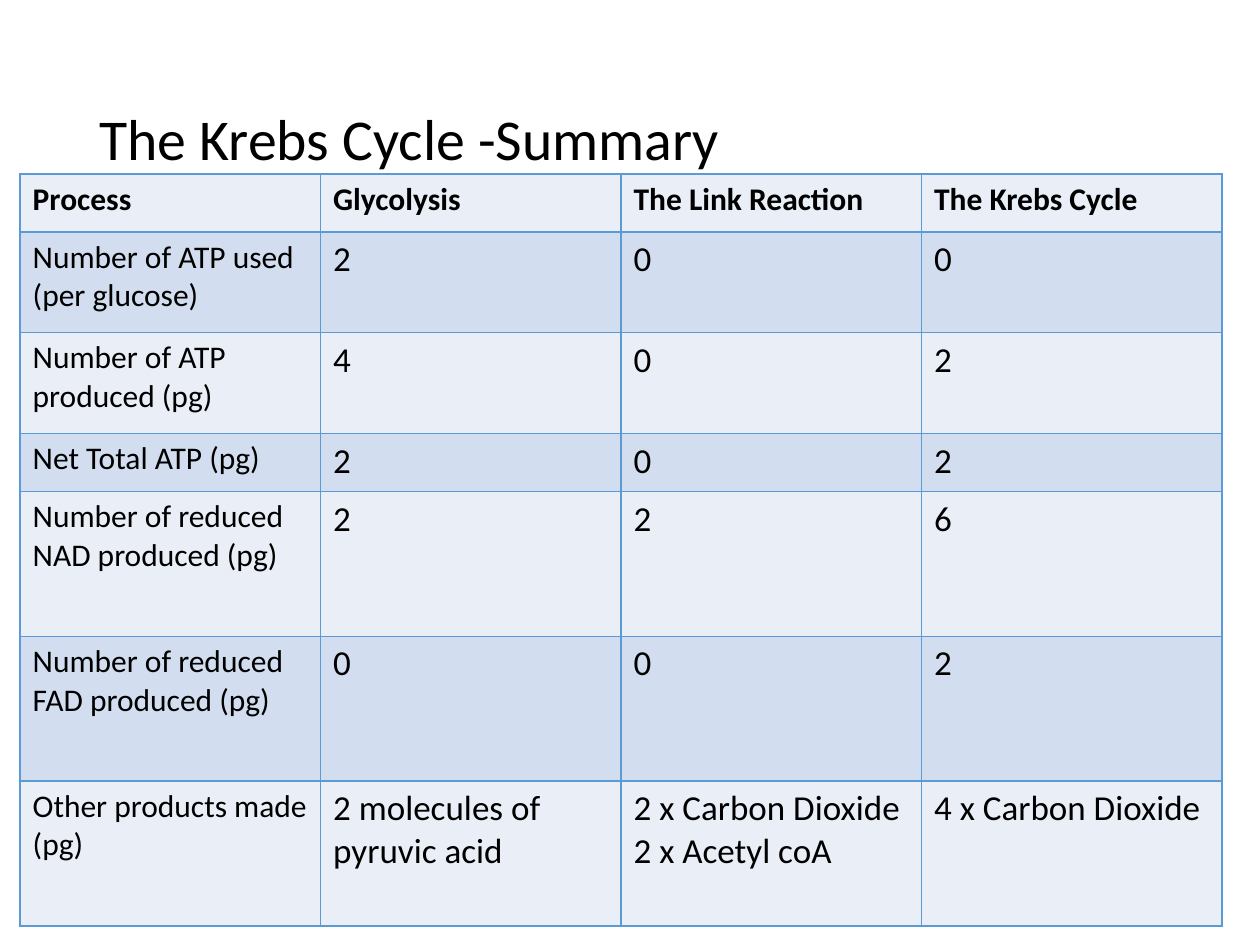
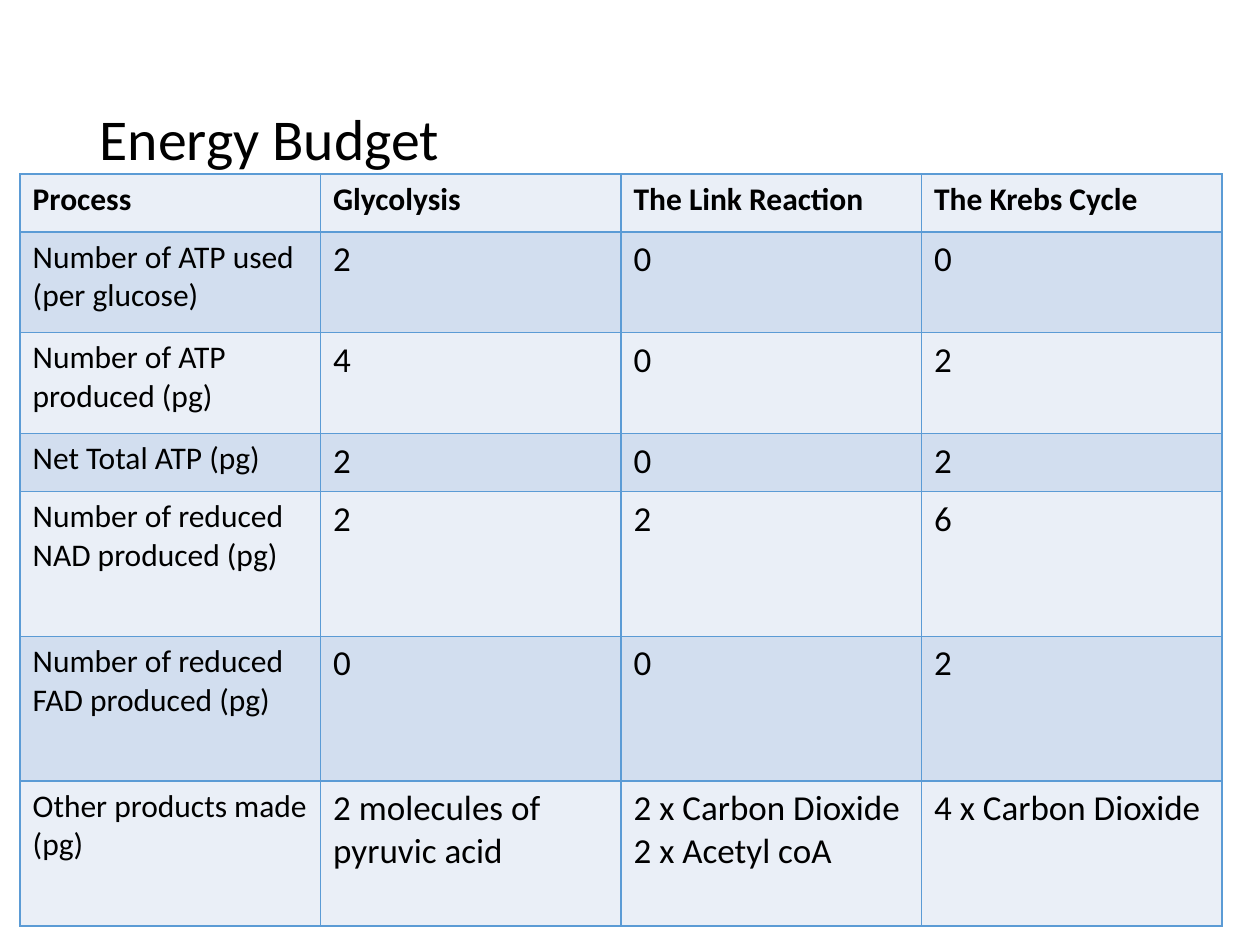
from lxml.etree import SubElement
from pptx import Presentation
from pptx.dml.color import RGBColor
from pptx.enum.text import MSO_ANCHOR, PP_ALIGN
from pptx.oxml.ns import qn
from pptx.util import Inches, Pt

COLORS = {"text": "000000", "border": "5B9BD5", "light": "EAEFF7", "dark": "D2DEEF"}
FONT = "Calibri"
TITLE_BOX = (0.69, 0.4, 8.62, 1.45)
BUDGET_BOX = (0.16, 1.38, 9.54, 5.97)
TITLES = ["The Krebs Cycle -Summary", "Energy Budget"]
ROW_HEIGHTS = [0.46, 0.8, 0.8, 0.46, 1.15, 1.15, 1.15]
BUDGET = [
    ("Process", "Glycolysis", "The Link Reaction", "The Krebs Cycle"),
    ("Number of ATP used\n(per glucose)", "2", "0", "0"),
    ("Number of ATP produced (pg)", "4", "0", "2"),
    ("Net Total ATP (pg)", "2", "0", "2"),
    ("Number of reduced NAD produced (pg)", "2", "2", "6"),
    ("Number of reduced FAD produced (pg)", "0", "0", "2"),
    ("Other products made (pg)", "2 molecules of pyruvic acid",
     "2 x Carbon Dioxide\n2 x Acetyl coA", "4 x Carbon Dioxide"),
]


def style_text(frame, size, bold=False):
    """Give every paragraph of a text frame the shared font."""
    for paragraph in frame.paragraphs:
        paragraph.alignment = PP_ALIGN.LEFT
        font = paragraph.font
        font.name, font.size, font.bold = FONT, Pt(size), bold
        font.color.rgb = RGBColor.from_string(COLORS["text"])


def add_borders(cell):
    """Draw a thin line on all four sides of a cell."""
    properties = cell._tc.get_or_add_tcPr()
    for side in ("a:lnL", "a:lnR", "a:lnT", "a:lnB"):
        line = SubElement(properties, qn(side), w=str(Pt(1)))
        fill = SubElement(line, qn("a:solidFill"))
        SubElement(fill, qn("a:srgbClr"), val=COLORS["border"])


def add_title(slide, text, box):
    """Place and format the slide title."""
    title = slide.shapes.title
    title.left, title.top, title.width, title.height = map(Inches, box)
    title.text_frame.text = text
    title.text_frame.vertical_anchor = MSO_ANCHOR.MIDDLE
    title.text_frame.paragraphs[0].line_spacing = 0.9
    style_text(title.text_frame, 33)


def add_budget(slide, box):
    """Add the banded table of products for each stage of respiration."""
    columns = len(BUDGET[0])
    table = slide.shapes.add_table(len(BUDGET), columns, *map(Inches, box)).table
    for column in table.columns:
        column.width = Inches(box[2] / columns)
    for r, (height, entries) in enumerate(zip(ROW_HEIGHTS, BUDGET)):
        table.rows[r].height = Inches(height)
        for c, entry in enumerate(entries):
            cell = table.cell(r, c)
            cell.text = entry
            style_text(cell.text_frame, 18 if r == 0 or c == 0 else 20, bold=r == 0)
            add_borders(cell)
            cell.fill.solid()
            band = COLORS["dark" if r % 2 else "light"]
            cell.fill.fore_color.rgb = RGBColor.from_string(band)


def add_budget_slide(deck, title):
    """Add one slide with a title above the budget table."""
    slide = deck.slides.add_slide(deck.slide_layouts[5])
    add_title(slide, title, TITLE_BOX)
    add_budget(slide, BUDGET_BOX)


def main():
    """Build and save the deck."""
    deck = Presentation()
    deck.slide_width, deck.slide_height = Inches(10), Inches(7.5)
    for title in TITLES:
        add_budget_slide(deck, title)
    deck.save("out.pptx")


if __name__ == "__main__":
    main()
